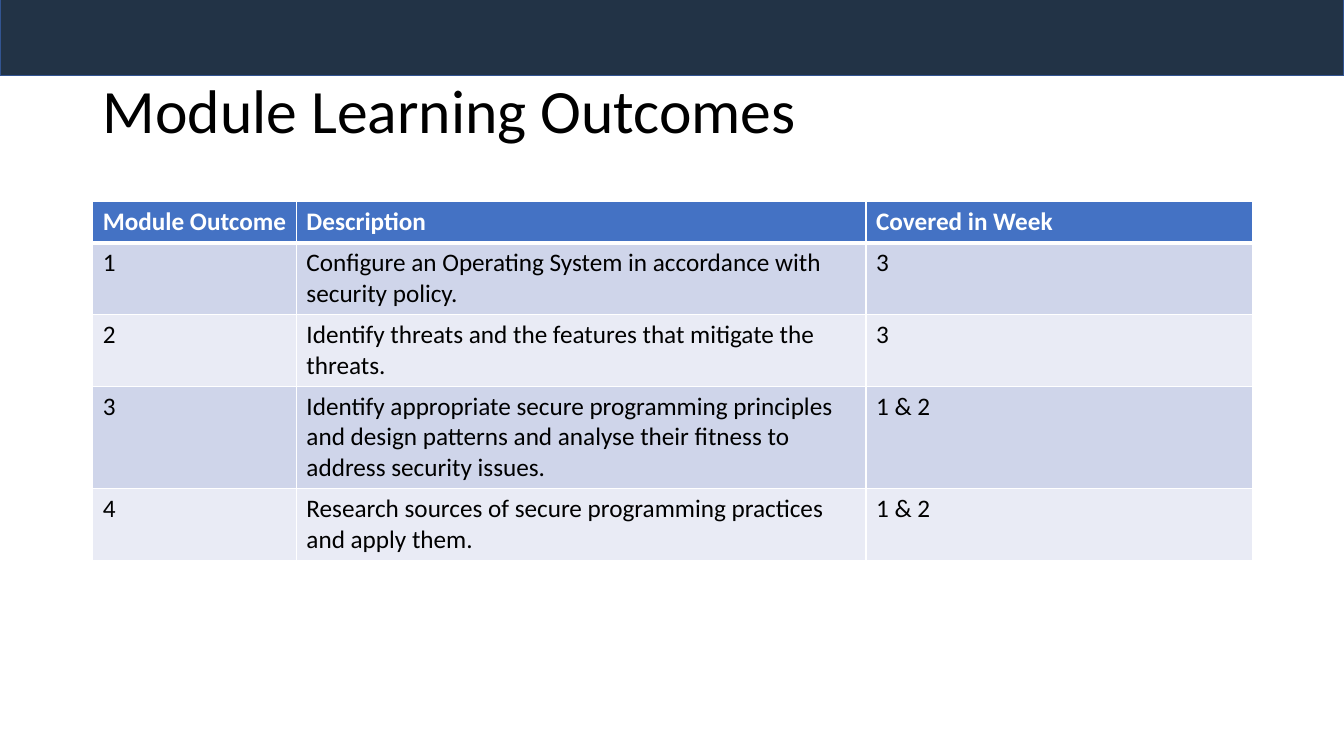
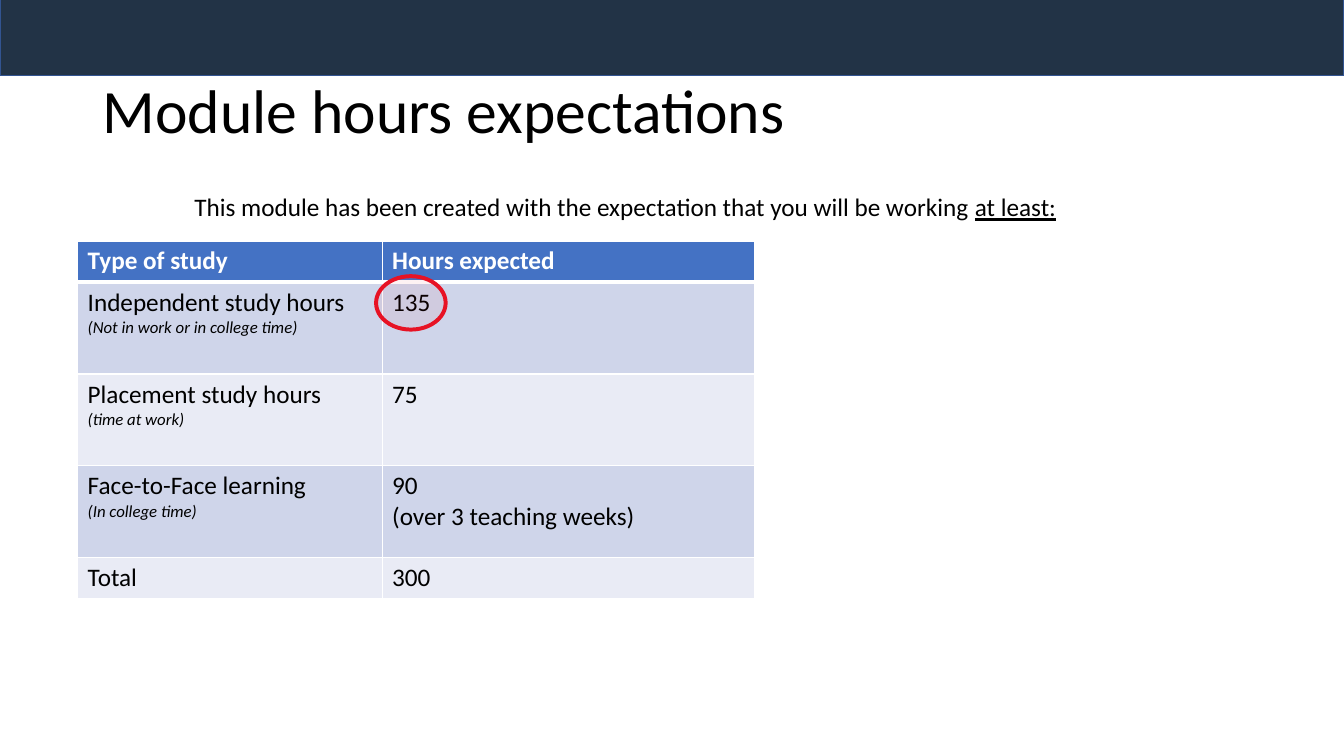
from pptx import Presentation, util as u
from pptx.dml.color import RGBColor
from pptx.enum import shapes, text
from pptx.oxml import parse_xml
from pptx.oxml.ns import nsdecls, qn

HUES = {"band": "223346", "edge": "325491", "head": "4472C4", "odd": "CFD5EA",
        "even": "E9EBF5", "ink": "000000", "white": "FFFFFF", "ring": "E71224"}
TITLE = {"name": "Calibri", "size": u.Pt(44)}
BODY = {"name": "Calibri", "size": u.Pt(18), "bold": False}
HEAD = {**BODY, "bold": True}
NOTE = {**BODY, "size": u.Pt(12), "italic": True}
WIDE, TALL = 13.33, 7.5


def hue(key):
    """Return the named colour."""
    return RGBColor.from_string(HUES[key])


def style(font, form, key="ink"):
    """Set each font value and the colour."""
    for name, value in form.items():
        setattr(font, name, value)
    font.color.rgb = hue(key)


def inches(box):
    """Turn a box of numbers into lengths."""
    return [u.Inches(side) for side in box]


def paint(shape, fill, line, width):
    """Fill and outline a shape, with no shadow."""
    shape.shadow.inherit = False
    shape.fill.solid()
    shape.fill.fore_color.rgb = hue(fill)
    shape.line.color.rgb = hue(line)
    shape.line.width = u.Pt(width)


def add_band(page, layout, box):
    """Draw the top band and hand it to the shared layout."""
    band = page.shapes.add_shape(shapes.MSO_SHAPE.RECTANGLE, *inches(box))
    paint(band, "band", "edge", 1)
    layout.shapes.element.insert(2, band.element)


def add_title(page, words, box):
    """Place and format the title."""
    title = page.shapes.title
    title.left, title.top, title.width, title.height = inches(box)
    frame = title.text_frame
    frame.text = words
    frame.vertical_anchor = text.MSO_ANCHOR.MIDDLE
    para = frame.paragraphs[0]
    para.alignment = text.PP_ALIGN.LEFT
    para.line_spacing = 0.9
    style(para.runs[0].font, TITLE)


def add_edges(cell, head):
    """Rule a cell in white, heavier below the header."""
    props = cell._tc.get_or_add_tcPr()
    for side in "LRTB":
        width = u.Pt(3 if head and side == "B" else 1)
        props.append(parse_xml(
            f'<a:ln{side} {nsdecls("a")} w="{width}"><a:solidFill>'
            f'<a:srgbClr val="{HUES["white"]}"/></a:solidFill></a:ln{side}>'))


def fill_cell(cell, words, row, col):
    """Write and colour one table cell."""
    head = row == 0
    add_edges(cell, head)
    cell.fill.solid()
    cell.fill.fore_color.rgb = hue("head" if head else "odd" if row % 2 else "even")
    cell.text = words
    for index, para in enumerate(cell.text_frame.paragraphs):
        form = HEAD if head else NOTE if index and col == 0 else BODY
        style(para.runs[0].font, form, "white" if head else "ink")


def add_grid(page, spot, wides, highs, rows):
    """Build a table from its column widths, row heights and words."""
    box = inches((*spot, sum(wides), sum(highs)))
    table = page.shapes.add_table(len(rows), len(wides), *box).table
    for column, wide in zip(table.columns, wides):
        column.width = u.Inches(wide)
    for line, high in zip(table.rows, highs):
        line.height = u.Inches(high)
    for row, line in enumerate(rows):
        for col, words in enumerate(line):
            fill_cell(table.cell(row, col), words, row, col)


def add_lead(page, box):
    """Write the line above the hours table."""
    frame = page.shapes.add_textbox(*inches(box)).text_frame
    frame.word_wrap = True
    para = frame.paragraphs[0]
    for words, line in (
            ("This module has been created with the expectation that you will be working ", False),
            ("at least:", True)):
        run = para.add_run()
        run.text = words
        style(run.font, {**BODY, "underline": line})


def add_ring(page, box):
    """Circle a value with a faintly tinted ellipse."""
    ring = page.shapes.add_shape(shapes.MSO_SHAPE.OVAL, *inches(box))
    paint(ring, "ring", "ring", 2.83)
    tint = ring.fill._xPr.find(qn("a:solidFill"))[0]
    tint.append(parse_xml(f'<a:alpha {nsdecls("a")} val="5000"/>'))


def add_page(deck, layout, words):
    """Start a slide with its title."""
    page = deck.slides.add_slide(layout)
    add_title(page, words, (0.92, 0.4, 11.5, 1.45))
    return page


def goals(page):
    """Fill the learning outcomes slide."""
    add_grid(page, (0.92, 2), (2.02, 5.65, 3.83), (0.41, 0.71, 0.71, 1.01, 0.71), (
        ("Module Outcome", "Description", "Covered in Week"),
        ("1", "Configure an Operating System in accordance with security policy.", "3"),
        ("2", "Identify threats and the features that mitigate the threats.", "3"),
        ("3", "Identify appropriate secure programming principles and design patterns "
              "and analyse their fitness to address security issues.", "1 & 2"),
        ("4", "Research sources of secure programming practices and apply them.", "1 & 2")))


def hours(page):
    """Fill the study hours slide."""
    left, top = 0.77, 2.39
    add_grid(page, (left, top), (3.02, 3.69), (0.41, 0.91, 0.91, 0.91, 0.41), (
        ("Type of study", "Hours expected"),
        ("Independent study hours\n(Not in work or in college time)", "135"),
        ("Placement study hours\n(time at work)", "75"),
        ("Face-to-Face learning\n(In college time)", "90\n(over 3 teaching weeks)"),
        ("Total", "300")))
    add_lead(page, (1.83, 1.85, 8.85, 0.4))
    add_ring(page, (left + 2.96, top + 0.35, 0.69, 0.53))


def main():
    """Build and save the deck."""
    deck = Presentation()
    deck.slide_width, deck.slide_height = inches((WIDE, TALL))
    layout = deck.slide_layouts[5]
    first = add_page(deck, layout, "Module Learning Outcomes")
    add_band(first, layout, (0, -0.03, WIDE, 0.78))
    goals(first)
    hours(add_page(deck, layout, "Module hours expectations"))
    deck.save("out.pptx")


if __name__ == "__main__":
    main()
